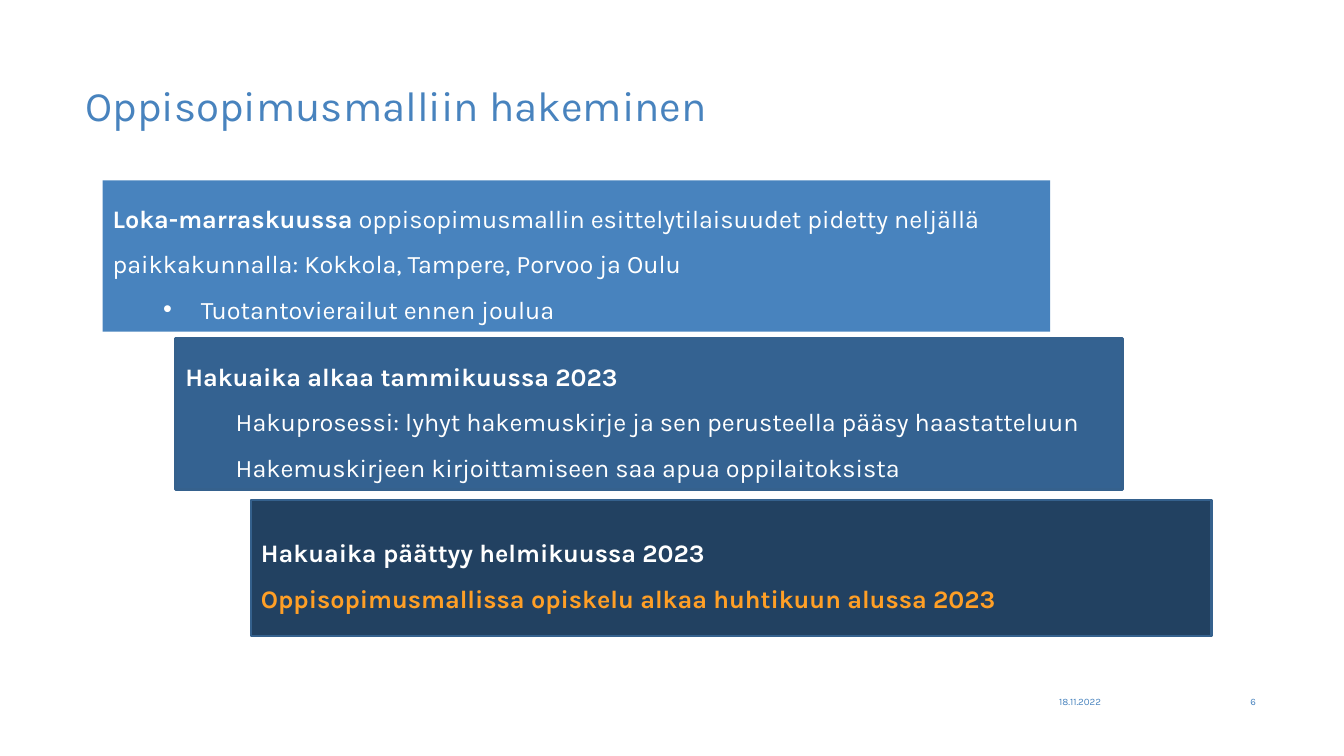
from lxml import etree
from pptx import Presentation
from pptx.dml.color import RGBColor
from pptx.enum.shapes import MSO_SHAPE
from pptx.enum.text import MSO_ANCHOR, MSO_AUTO_SIZE, PP_ALIGN
from pptx.oxml.ns import qn
from pptx.util import Pt

RECTANGLE = MSO_SHAPE.RECTANGLE
TOP, MIDDLE = MSO_ANCHOR.TOP, MSO_ANCHOR.MIDDLE
NO_AUTOFIT = MSO_AUTO_SIZE.NONE
LEFT, CENTER, RIGHT = PP_ALIGN.LEFT, PP_ALIGN.CENTER, PP_ALIGN.RIGHT

FONT = "Karla"
COLORS = {
    "blue": "4883BE",
    "medium": "346291",
    "dark": "224161",
    "outline": "35618D",
    "white": "FFFFFF",
    "orange": "FF9F26",
}

TITLE = "Oppisopimusmalliin hakeminen"
TITLE_BOX = (61.2, 56.9, 835.2, 70.6)

# Paragraph: (kind, runs); run: (text, bold, colour)
STEPS = [
    {
        "box": (73.4, 128.9, 676.8, 108), "fill": "blue", "line": None,
        "paragraphs": [
            ("plain", [
                ("Loka-marraskuussa", True, "white"),
                (" oppisopimusmallin esittelytilaisuudet pidetty neljällä "
                 "paikkakunnalla: Kokkola, Tampere, Porvoo ja Oulu", False, "white"),
            ]),
            ("bullet", [("Tuotantovierailut ennen joulua", False, "white")]),
        ],
    },
    {
        "box": (125.3, 241.9, 676.8, 108), "fill": "medium", "line": "outline",
        "paragraphs": [
            ("plain", [("Hakuaika alkaa tammikuussa 2023", True, "white")]),
            ("indented", [("Hakuprosessi: lyhyt hakemuskirje ja sen perusteella "
                           "pääsy haastatteluun", False, "white")]),
            ("indented", [("Hakemuskirjeen kirjoittamiseen saa apua "
                           "oppilaitoksista", False, "white")]),
        ],
    },
    {
        "box": (179.3, 357.1, 686.2, 97.2), "fill": "dark", "line": "outline",
        "paragraphs": [
            ("plain", [("Hakuaika päättyy helmikuussa 2023", True, "white")]),
            ("plain", [("Oppisopimusmallissa opiskelu alkaa huhtikuun alussa 2023",
                        True, "orange")]),
        ],
    },
]

# Left margin and first-line indent of each paragraph kind
INDENTS = {"plain": (0, 0), "bullet": (63, -27), "indented": (36, 0)}

FOOTERS = [
    ("18.11.2022", (740.9, 496.8, 61.2, 14.4), CENTER),
    ("6", (865.4, 496.8, 31.7, 14.4), RIGHT),
]


def color(name):
    return RGBColor.from_string(COLORS[name])


def points(box):
    return [Pt(value) for value in box]


def add_run(paragraph, text, size, color_name, bold=False):
    run = paragraph.add_run()
    run.text = text
    run.font.name = FONT
    run.font.size = Pt(size)
    run.font.bold = bold
    run.font.color.rgb = color(color_name)


def set_margins(frame, left, top, right, bottom):
    frame.margin_left, frame.margin_top = Pt(left), Pt(top)
    frame.margin_right, frame.margin_bottom = Pt(right), Pt(bottom)


def format_paragraph(paragraph, kind):
    margin, indent = INDENTS[kind]
    properties = paragraph._p.get_or_add_pPr()
    properties.set("marL", str(Pt(margin)))
    properties.set("indent", str(Pt(indent)))
    if kind == "bullet":
        etree.SubElement(properties, qn("a:buFont"), typeface="Arial")
        etree.SubElement(properties, qn("a:buChar"), char="•")
    if kind != "plain":
        paragraph.level = 1
    paragraph.alignment = LEFT
    paragraph.line_spacing = 1.5


def add_title(slide):
    title = slide.shapes.title
    title.left, title.top, title.width, title.height = points(TITLE_BOX)
    frame = title.text_frame
    frame.word_wrap = True
    frame.auto_size = NO_AUTOFIT
    frame.vertical_anchor = TOP
    set_margins(frame, 0, 0, 2.9, 0)
    paragraph = frame.paragraphs[0]
    paragraph.alignment = LEFT
    add_run(paragraph, TITLE, 30, "blue")


def add_step(slide, step):
    shape = slide.shapes.add_shape(RECTANGLE, *points(step["box"]))
    shape.shadow.inherit = False
    shape.fill.solid()
    shape.fill.fore_color.rgb = color(step["fill"])
    if step["line"]:
        shape.line.color.rgb = color(step["line"])
        shape.line.width = Pt(2)
    else:
        shape.line.fill.background()
    frame = shape.text_frame
    frame.word_wrap = True
    frame.vertical_anchor = MIDDLE
    for index, (kind, runs) in enumerate(step["paragraphs"]):
        paragraph = frame.add_paragraph() if index else frame.paragraphs[0]
        format_paragraph(paragraph, kind)
        for text, bold, color_name in runs:
            add_run(paragraph, text, 18, color_name, bold)


def add_footer(slide, text, box, alignment):
    frame = slide.shapes.add_textbox(*points(box)).text_frame
    frame.word_wrap = True
    set_margins(frame, 0, 0, 0, 0)
    paragraph = frame.paragraphs[0]
    paragraph.alignment = alignment
    add_run(paragraph, text, 7, "blue")


def main():
    presentation = Presentation()
    presentation.slide_width, presentation.slide_height = Pt(960), Pt(540)
    slide = presentation.slides.add_slide(presentation.slide_layouts[5])
    add_title(slide)
    for step in STEPS:
        add_step(slide, step)
    for footer in FOOTERS:
        add_footer(slide, *footer)
    presentation.save("out.pptx")


if __name__ == "__main__":
    main()
